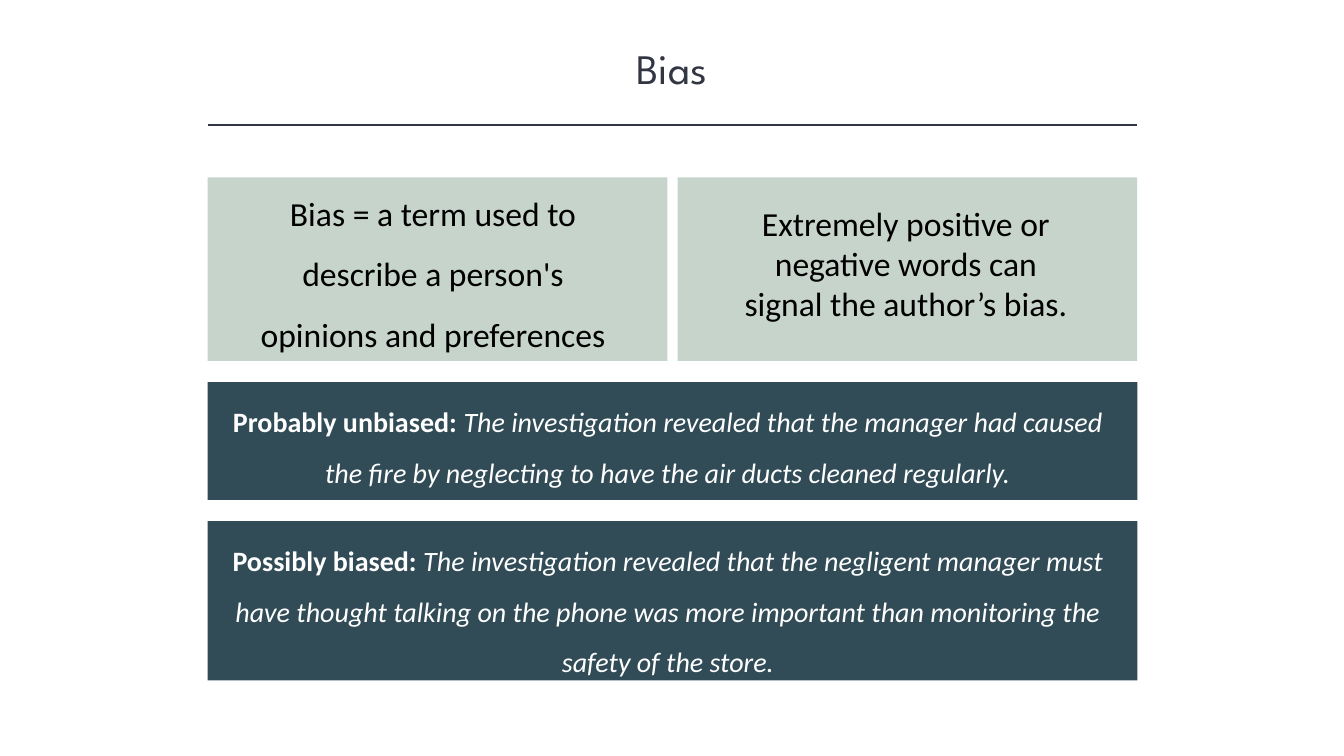
from dataclasses import dataclass

from lxml import etree
from pptx import Presentation
from pptx.dml.color import RGBColor
from pptx.enum.shapes import MSO_CONNECTOR, MSO_SHAPE
from pptx.enum.text import MSO_ANCHOR, PP_ALIGN
from pptx.oxml.ns import qn
from pptx.util import Inches, Pt

RECTANGLE = MSO_SHAPE.RECTANGLE
STRAIGHT = MSO_CONNECTOR.STRAIGHT
TOP, MIDDLE = MSO_ANCHOR.TOP, MSO_ANCHOR.MIDDLE
CENTER = PP_ALIGN.CENTER

# Content
TITLE = "Bias"
CARDS = [  # text, line spacing, text offset from the card's left edge
    ("Bias = a term used to describe a person's opinions and preferences", 1.5, 0.42),
    ("Extremely positive or negative words can signal the author’s bias.", 1.0, 0.45),
]
EXAMPLES = [  # label, sentence, panel height
    ("Probably unbiased: ",
     "The investigation revealed that the manager had caused the fire by "
     "neglecting to have the air ducts cleaned regularly.", 1.17),
    ("Possibly biased: ",
     "The investigation revealed that the negligent manager must have thought "
     "talking on the phone was more important than monitoring the safety of "
     "the store.", 1.58),
]


@dataclass(frozen=True)
class Theme:
    ink: str = "323542"
    card: str = "C7D4CB"
    card_text: str = "000000"
    panel: str = "314C57"
    panel_text: str = "FFFFFF"
    title_font: str = "League Spartan"
    body_font: str = "Calibri"
    title_size: int = 30
    card_size: int = 24
    panel_size: int = 20


THEME = Theme()

# Grid, in inches
WIDTH, HEIGHT = 13.33, 7.5
LEFT, CONTENT_WIDTH = 2.06, 9.22
RULE_Y = 1.24
CARD_TOP, CARD_HEIGHT, CARD_GAP = 1.76, 1.82, 0.1
CARD_WIDTH = (CONTENT_WIDTH - CARD_GAP) / len(CARDS)
CARD_TEXT_WIDTH, CARD_TEXT_HEIGHT, CARD_TEXT_MIDDLE = 3.63, 1.9, 2.61
ROW_GAP = 0.21


def format_span(span, font, size, color, bold=False, italic=False):
    span.font.name = font
    span.font.size = Pt(size)
    span.font.color.rgb = RGBColor.from_string(color)
    span.font.bold = bold
    span.font.italic = italic


def set_frame(frame, anchor, margins):
    frame.word_wrap = True
    frame.vertical_anchor = anchor
    (frame.margin_left, frame.margin_top,
     frame.margin_right, frame.margin_bottom) = map(Inches, margins)


def add_block(page, left, top, width, height, color):
    block = page.shapes.add_shape(RECTANGLE, *map(Inches, (left, top, width, height)))
    block.shadow.inherit = False
    block.fill.solid()
    block.fill.fore_color.rgb = RGBColor.from_string(color)
    block.line.fill.background()
    return block


def add_title(page):
    title = page.shapes.title
    title.left, title.top, title.width, title.height = map(
        Inches, ((WIDTH - 10) / 2, 0.37, 10, 0.61))
    title.text_frame.text = TITLE
    set_frame(title.text_frame, TOP, (0.1, 0.05, 0.1, 0.05))
    para = title.text_frame.paragraphs[0]
    para.alignment = CENTER
    para.line_spacing = 1.0
    format_span(para.runs[0], THEME.title_font, THEME.title_size, THEME.ink)

    rule = page.shapes.add_connector(
        STRAIGHT, *map(Inches, (LEFT, RULE_Y, LEFT + CONTENT_WIDTH, RULE_Y)))
    rule.line.color.rgb = RGBColor.from_string(THEME.ink)
    rule.line.width = Pt(1)
    etree.SubElement(rule.element.spPr, qn("a:effectLst"))


def add_cards(page):
    for column, (text, spacing, offset) in enumerate(CARDS):
        left = LEFT + column * (CARD_WIDTH + CARD_GAP)
        add_block(page, left, CARD_TOP, CARD_WIDTH, CARD_HEIGHT, THEME.card)
        box = page.shapes.add_textbox(*map(Inches, (
            left + offset, CARD_TEXT_MIDDLE - CARD_TEXT_HEIGHT / 2,
            CARD_TEXT_WIDTH, CARD_TEXT_HEIGHT)))
        box.text_frame.text = text
        set_frame(box.text_frame, MIDDLE, (0.1, 0, 0.1, 0))
        para = box.text_frame.paragraphs[0]
        para.alignment = CENTER
        para.line_spacing = spacing
        format_span(para.runs[0], THEME.body_font, THEME.card_size, THEME.card_text)


def add_examples(page):
    top = CARD_TOP + CARD_HEIGHT + ROW_GAP
    for label, sentence, height in EXAMPLES:
        panel = add_block(page, LEFT, top, CONTENT_WIDTH, height, THEME.panel)
        set_frame(panel.text_frame, TOP, (0.2, 0.06, 0.29, 0))
        para = panel.text_frame.paragraphs[0]
        para.alignment = CENTER
        para.line_spacing = 1.5
        for text, is_label in ((label, True), (sentence, False)):
            span = para.add_run()
            span.text = text
            format_span(span, THEME.body_font, THEME.panel_size, THEME.panel_text,
                        bold=is_label, italic=not is_label)
        top += height + ROW_GAP


def main():
    deck = Presentation()
    deck.slide_width, deck.slide_height = Inches(WIDTH), Inches(HEIGHT)
    page = deck.slides.add_slide(deck.slide_layouts.get_by_name("Title Only"))
    add_title(page)
    add_cards(page)
    add_examples(page)
    deck.save("out.pptx")


if __name__ == "__main__":
    main()
